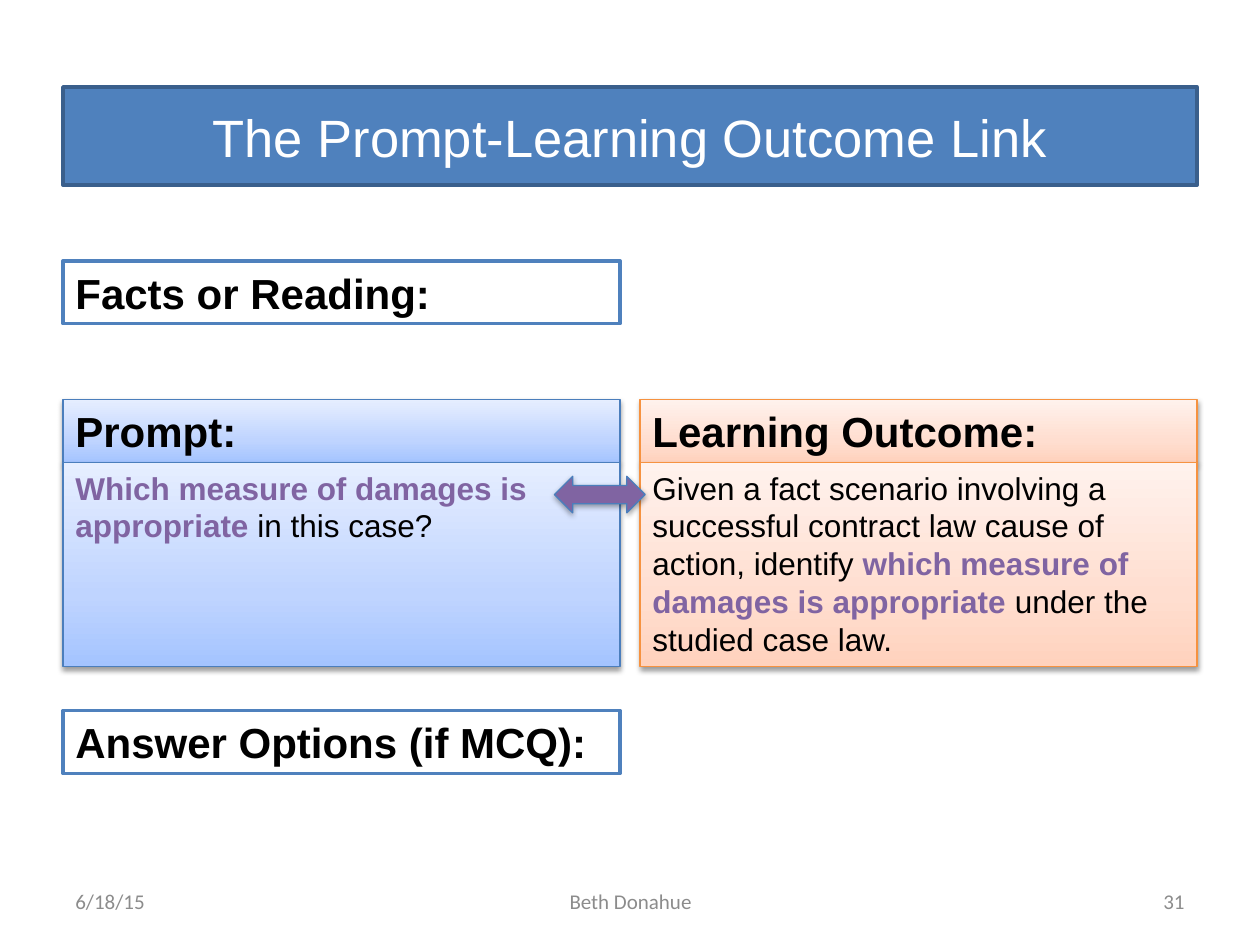
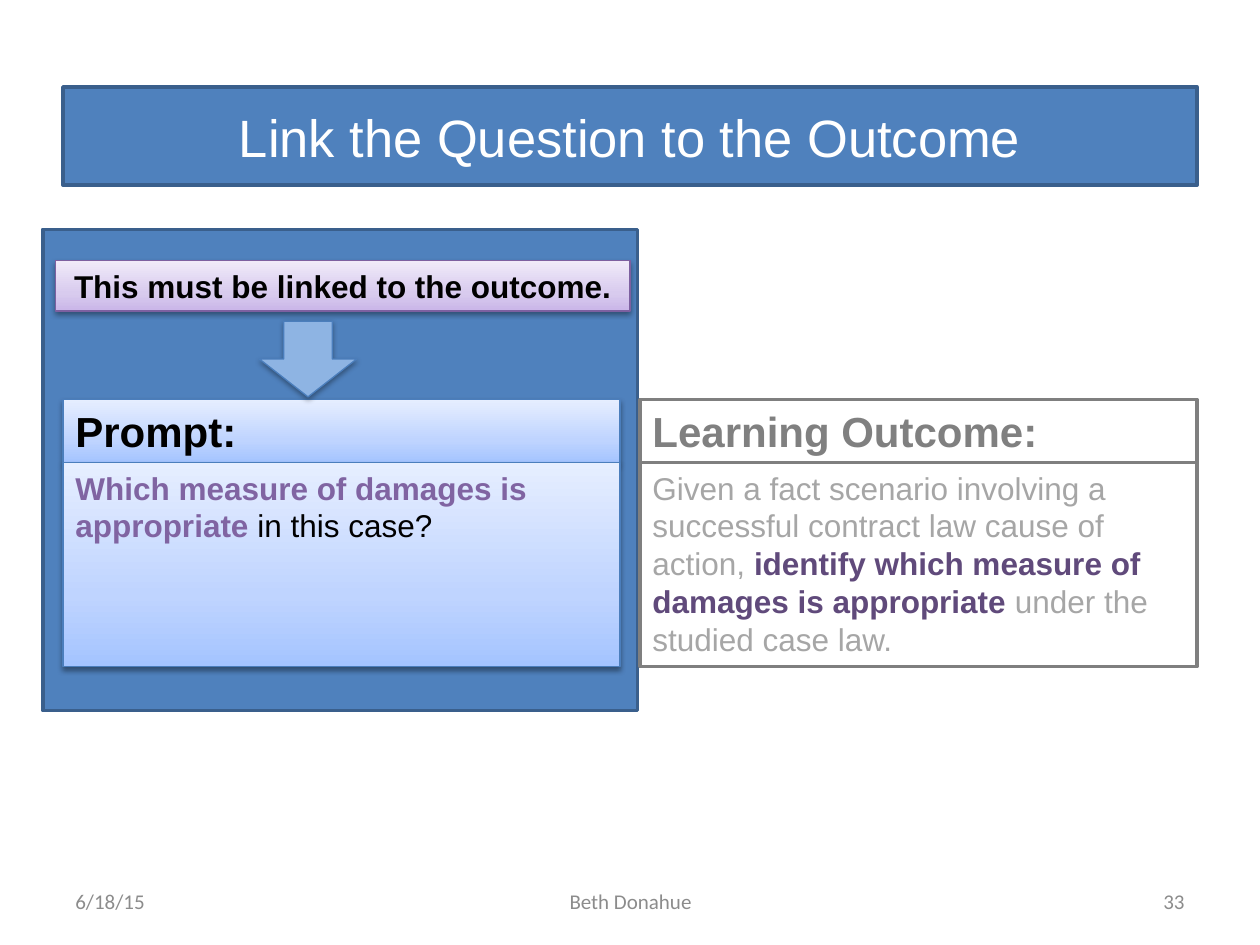
from lxml.etree import SubElement
from pptx import Presentation
from pptx.dml.color import RGBColor
from pptx.enum.shapes import MSO_SHAPE
from pptx.enum.text import MSO_ANCHOR, PP_ALIGN
from pptx.oxml.ns import qn
from pptx.util import Inches, Pt

MARGIN, GAP = 0.5, 0.16
CONTENT_WIDTH = 10 - 2 * MARGIN
COLUMN = (CONTENT_WIDTH - GAP) / 2
LEFT, RIGHT = MARGIN, MARGIN + COLUMN + GAP
LABEL_HEIGHT, BODY_HEIGHT = 0.5, 1.62
LABEL_ROW = 3.17
BODY_ROW = LABEL_ROW + LABEL_HEIGHT

BLACK, WHITE, PURPLE, DEEP_PURPLE = "000000", "FFFFFF", "8064A2", "604A7B"
BLUE, LINE_BLUE, GREY, PALE_GREY = "4F81BD", "4B7EBC", "808080", "A6A6A6"
TITLE_STYLE = {"fill": BLUE, "line": "3A5F8C", "width": 2}
OUTLINE_STYLE = {"fill": WHITE, "line": BLUE, "width": 2}
MUTED_STYLE = {"fill": WHITE, "line": "7F7F7F", "width": 2}
BLUE_STYLE = {"fill": ("A4C4FF", "BFD4FF", "E6EEFF"), "line": LINE_BLUE, "shadow": 38}
ORANGE_STYLE = {"fill": ("FFD2BD", "FFDED0", "FFF2ED"), "line": "F69240", "shadow": 38}
PURPLE_STYLE = {"fill": ("C9B5E8", "D8CBEE", "F0EAF9"), "line": "7D60A0", "shadow": 38}
LINK_ARROW_STYLE = {"fill": PURPLE, "line": LINE_BLUE, "shadow": 35}
DOWN_ARROW_STYLE = {"fill": "8EB4E3", "line": LINE_BLUE, "shadow": 35}


def color(hex_value):
    return RGBColor.from_string(hex_value)


def add_block(slide, box, style, runs=(), size=18, align=PP_ALIGN.LEFT,
              anchor=MSO_ANCHOR.TOP, kind=MSO_SHAPE.RECTANGLE, font="Arial"):
    lengths = [Inches(value) for value in box]
    if style is None:
        shape = slide.shapes.add_textbox(*lengths)
    else:
        shape = slide.shapes.add_shape(kind, *lengths)
        shape.shadow.inherit = False
        properties = shape._element.spPr
        if isinstance(style["fill"], tuple):
            shape.fill.gradient()
            gradient = properties.find(qn("a:gradFill"))
            stops = gradient.find(qn("a:gsLst"))
            for stop in list(stops):
                stops.remove(stop)
            for position, shade in zip((0, 35, 100), style["fill"]):
                stop = SubElement(stops, qn("a:gs"), pos=str(position * 1000))
                SubElement(stop, qn("a:srgbClr"), val=shade)
            gradient.find(qn("a:lin")).set("ang", str(270 * 60000))
        else:
            shape.fill.solid()
            shape.fill.fore_color.rgb = color(style["fill"])
        shape.line.color.rgb = color(style["line"])
        shape.line.width = Pt(style.get("width", 0.75))
        if "shadow" in style:
            shadow = SubElement(
                properties.find(qn("a:effectLst")), qn("a:outerShdw"),
                blurRad=str(Pt(3.1)), dist=str(Pt(1.6)), dir=str(90 * 60000), rotWithShape="0")
            shade = SubElement(shadow, qn("a:srgbClr"), val=BLACK)
            SubElement(shade, qn("a:alpha"), val=str(style["shadow"] * 1000))
    frame = shape.text_frame
    frame.word_wrap = True
    frame.vertical_anchor = anchor
    paragraph = frame.paragraphs[0]
    paragraph.alignment = align
    paragraph.font.size = Pt(size)
    paragraph.font.name = font
    for text, text_color, bold in runs:
        run = paragraph.add_run()
        run.text = text
        run.font.color.rgb = color(text_color)
        run.font.bold = bold


presentation = Presentation()
presentation.slide_width, presentation.slide_height = Inches(10), Inches(7.5)

slides = []
for title, number, outcome_style, label_color, outcome_runs in (
    ("The Prompt-Learning Outcome Link", "31", ORANGE_STYLE, BLACK, [
        ("Given a fact scenario involving a successful contract law cause of action, identify ",
         BLACK, False),
        ("which measure of damages is appropriate ", PURPLE, True),
        ("under the studied case law.", BLACK, False)]),
    ("Link the Question to the Outcome", "33", MUTED_STYLE, GREY, [
        ("Given a fact scenario involving a successful contract law cause of action, ",
         PALE_GREY, False),
        ("identify which measure of damages is appropriate ", DEEP_PURPLE, True),
        ("under the studied case law.", PALE_GREY, False)]),
):
    slide = presentation.slides.add_slide(presentation.slide_layouts[6])
    if slides:
        add_block(slide, (LEFT - GAP, 1.82, 4.72, 3.82), TITLE_STYLE)
    slides.append(slide)
    add_block(slide, (LEFT, 0.69, CONTENT_WIDTH, 0.78), TITLE_STYLE,
              [(title, WHITE, False)], 30, PP_ALIGN.CENTER, MSO_ANCHOR.MIDDLE)
    prompt_runs = [("Which measure of damages is appropriate ", PURPLE, True),
                   ("in this case?", BLACK, False)]
    for left, style, label, shade, body_runs in (
        (LEFT, BLUE_STYLE, "Prompt:", BLACK, prompt_runs),
        (RIGHT, outcome_style, "Learning Outcome:", label_color, outcome_runs),
    ):
        add_block(slide, (left, LABEL_ROW, COLUMN, LABEL_HEIGHT), style, [(label, shade, True)], 24)
        add_block(slide, (left, BODY_ROW, COLUMN, BODY_HEIGHT), style, body_runs)
    for left, width, text, align in (
        (LEFT, 2.33, "6/18/15", PP_ALIGN.LEFT),
        (3.42, 3.17, "Beth Donahue", PP_ALIGN.CENTER),
        (7.17, 2.33, number, PP_ALIGN.RIGHT),
    ):
        add_block(slide, (left, 6.95, width, 0.4), None, [(text, "8C8C8C", False)],
                  12, align, MSO_ANCHOR.MIDDLE, font="Calibri")

link_slide, question_slide = slides
for top, text, anchor in ((2.07, "Facts or Reading:", MSO_ANCHOR.BOTTOM),
                          (5.64, "Answer Options (if MCQ):", MSO_ANCHOR.TOP)):
    add_block(link_slide, (LEFT, top, COLUMN, LABEL_HEIGHT), OUTLINE_STYLE,
              [(text, BLACK, True)], 24, anchor=anchor)
add_block(link_slide, (4.4, 3.78, 0.72, 0.29), LINK_ARROW_STYLE, kind=MSO_SHAPE.LEFT_RIGHT_ARROW)

add_block(question_slide, (0.44, 2.07, 4.56, 0.4), PURPLE_STYLE,
          [("This must be linked to the outcome.", BLACK, True)], align=PP_ALIGN.CENTER)
add_block(question_slide, (2.06, 2.55, 0.77, 0.6), DOWN_ARROW_STYLE, kind=MSO_SHAPE.DOWN_ARROW)

presentation.save("out.pptx")
